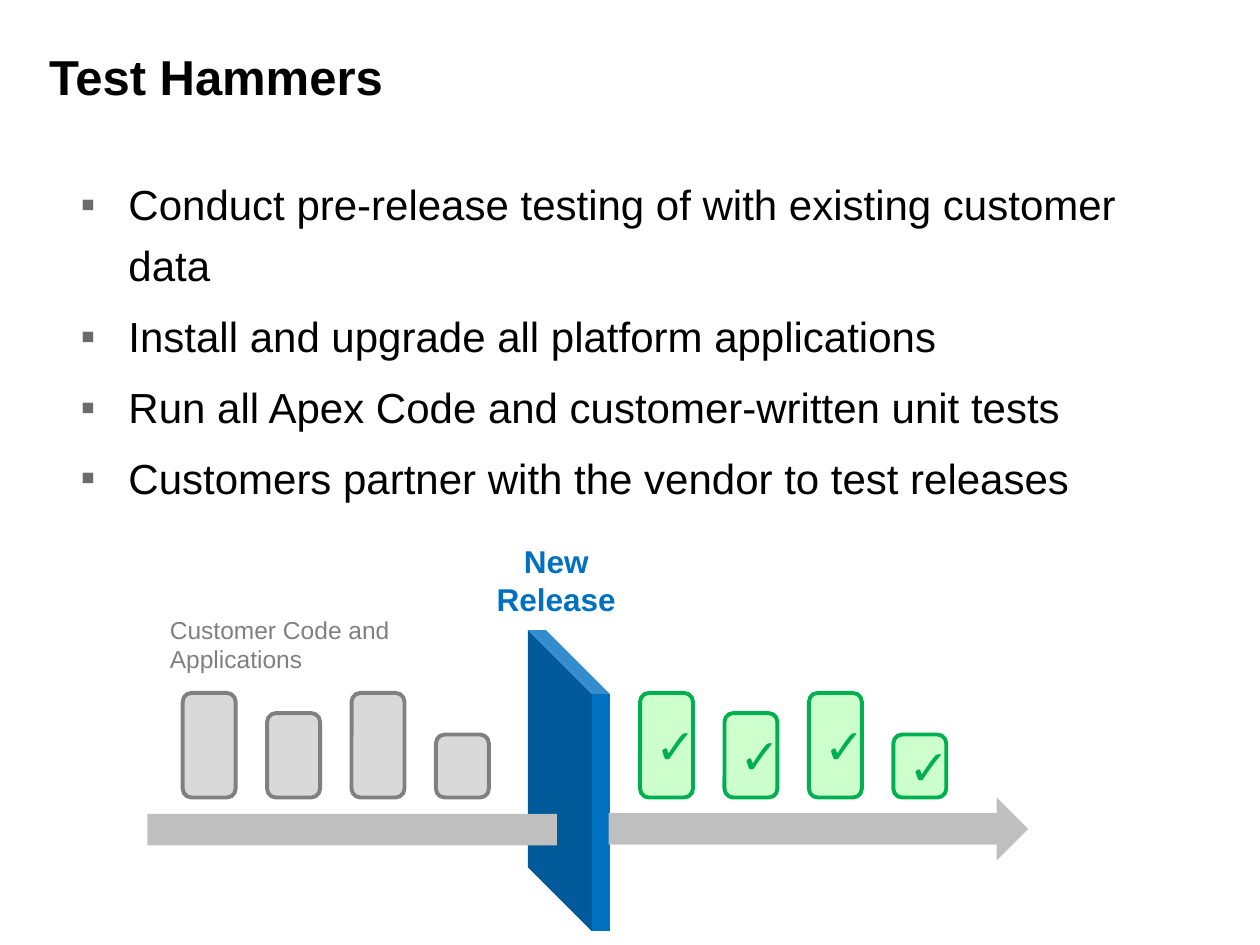
from dataclasses import dataclass

import lxml.etree
import pptx
import pptx.dml.color
import pptx.enum.shapes
import pptx.enum.text
import pptx.oxml.ns
import pptx.util

Inches = pptx.util.Inches
Pt = pptx.util.Pt
Shapes = pptx.enum.shapes.MSO_SHAPE
Align = pptx.enum.text.PP_ALIGN
Anchor = pptx.enum.text.MSO_ANCHOR
qn = pptx.oxml.ns.qn

FONT = "Arial"
COLORS = {
    "text": "000000",
    "bullet": "6B6B6B",
    "release": "0070C0",
    "before_fill": "D9D9D9",
    "before_line": "808080",
    "after_fill": "CCFFCC",
    "after_line": "00B050",
    "arrow": "BFBFBF",
}
BULLETS = [
    "Conduct pre-release testing of with existing customer data",
    "Install and upgrade all platform applications",
    "Run all Apex Code and customer-written unit tests",
    "Customers partner with the vendor to test releases",
]
BAR_HEIGHTS = [0.83, 0.67, 0.83, 0.5]
BAR_WIDTH = 0.42
BAR_PITCH = 0.67
BAR_BOTTOM = 6.33


@dataclass(frozen=True)
class Box:
    left: float
    top: float
    width: float
    height: float

    def lengths(self) -> tuple:
        return tuple(Inches(v) for v in (self.left, self.top, self.width, self.height))


@dataclass(frozen=True)
class Label:
    box: Box
    text: str
    size: int
    color: str
    bold: bool = False
    align: Align = Align.LEFT
    anchor: Anchor = Anchor.TOP
    insets: tuple = (0.1, 0.05, 0.1, 0.05)


@dataclass(frozen=True)
class BarGroup:
    left: float
    fill: str
    line: str
    mark: str = ""


LABELS = [
    Label(Box(0.33, 0, 9, 1.2), "Test Hammers", 28, "text", bold=True,
          anchor=Anchor.MIDDLE, insets=(0.06, 0.06, 0.1, 0.06)),
    Label(Box(3.83, 4.25, 1.17, 0.71), "New Release", 18, "release", bold=True,
          align=Align.CENTER),
    Label(Box(1.25, 4.83, 2.67, 0.57), "Customer Code and Applications", 14, "before_line"),
]
BAR_GROUPS = [
    BarGroup(1.45, "before_fill", "before_line"),
    BarGroup(5.08, "after_fill", "after_line", "✓"),
]


def rgb(name: str) -> pptx.dml.color.RGBColor:
    return pptx.dml.color.RGBColor.from_string(COLORS[name])


def style_font(paragraph, size: int, color: str, bold: bool = False) -> None:
    paragraph.font.name = FONT
    paragraph.font.size = Pt(size)
    paragraph.font.bold = bold
    paragraph.font.color.rgb = rgb(color)


def add_text_frame(slide, box: Box, insets: tuple):
    frame = slide.shapes.add_textbox(*box.lengths()).text_frame
    frame.word_wrap = True
    frame.margin_left, frame.margin_top, frame.margin_right, frame.margin_bottom = (
        Inches(inset) for inset in insets)
    return frame


def add_label(slide, label: Label) -> None:
    frame = add_text_frame(slide, label.box, label.insets)
    frame.vertical_anchor = label.anchor
    paragraph = frame.paragraphs[0]
    paragraph.text = label.text
    paragraph.alignment = label.align
    style_font(paragraph, label.size, label.color, label.bold)


def add_bullet(paragraph) -> None:
    properties = paragraph._p.get_or_add_pPr()
    properties.set("marL", str(Inches(0.39)))
    properties.set("indent", str(Inches(-0.38)))
    color = lxml.etree.SubElement(properties, qn("a:buClr"))
    lxml.etree.SubElement(color, qn("a:srgbClr"), val=COLORS["bullet"])
    lxml.etree.SubElement(properties, qn("a:buFont"), typeface=FONT)
    lxml.etree.SubElement(properties, qn("a:buChar"), char="▪")


def add_bullet_list(slide, box: Box, items: list[str]) -> None:
    frame = add_text_frame(slide, box, (0.07, 0.07, 0.15, 0.07))
    for index, item in enumerate(items):
        paragraph = frame.add_paragraph() if index else frame.paragraphs[0]
        paragraph.text = item
        add_bullet(paragraph)
        paragraph.line_spacing = 1.2
        paragraph.space_before = Pt(6 if index else 0)
        style_font(paragraph, 24, "text")


def add_filled_shape(slide, kind: Shapes, box: Box, fill: str, line: str = ""):
    shape = slide.shapes.add_shape(kind, *box.lengths())
    shape.shadow.inherit = False
    shape.fill.solid()
    shape.fill.fore_color.rgb = rgb(fill)
    if line:
        shape.line.color.rgb = rgb(line)
        shape.line.width = Pt(2.25)
    else:
        shape.line.fill.background()
    return shape


def add_bar_group(slide, group: BarGroup) -> None:
    for index, height in enumerate(BAR_HEIGHTS):
        box = Box(group.left + index * BAR_PITCH, BAR_BOTTOM - height, BAR_WIDTH, height)
        shape = add_filled_shape(slide, Shapes.ROUNDED_RECTANGLE, box, group.fill, group.line)
        if group.mark:
            shape.text_frame.vertical_anchor = Anchor.MIDDLE
            paragraph = shape.text_frame.paragraphs[0]
            paragraph.text = group.mark
            paragraph.alignment = Align.CENTER
            style_font(paragraph, 28, group.line)


def add_release_wall(slide) -> None:
    wall = add_filled_shape(slide, Shapes.CUBE, Box(4.19, 5, 0.65, 2.39), "release")
    wall.adjustments[0] = 0.78
    wall._element.spPr.find(qn("a:xfrm")).set("flipH", "1")


def main() -> None:
    presentation = pptx.Presentation()
    presentation.slide_width = Inches(10)
    presentation.slide_height = Inches(7.5)
    slide = presentation.slides.add_slide(presentation.slide_layouts[6])
    add_bullet_list(slide, Box(0.56, 1.27, 8.94, 6.23), BULLETS)
    add_release_wall(slide)
    for label in LABELS:
        add_label(slide, label)
    for group in BAR_GROUPS:
        add_bar_group(slide, group)
    add_filled_shape(slide, Shapes.RECTANGLE, Box(1.17, 6.46, 3.25, 0.25), "arrow")
    add_filled_shape(slide, Shapes.RIGHT_ARROW, Box(4.83, 6.33, 3.33, 0.5), "arrow")
    presentation.save("out.pptx")


if __name__ == "__main__":
    main()
